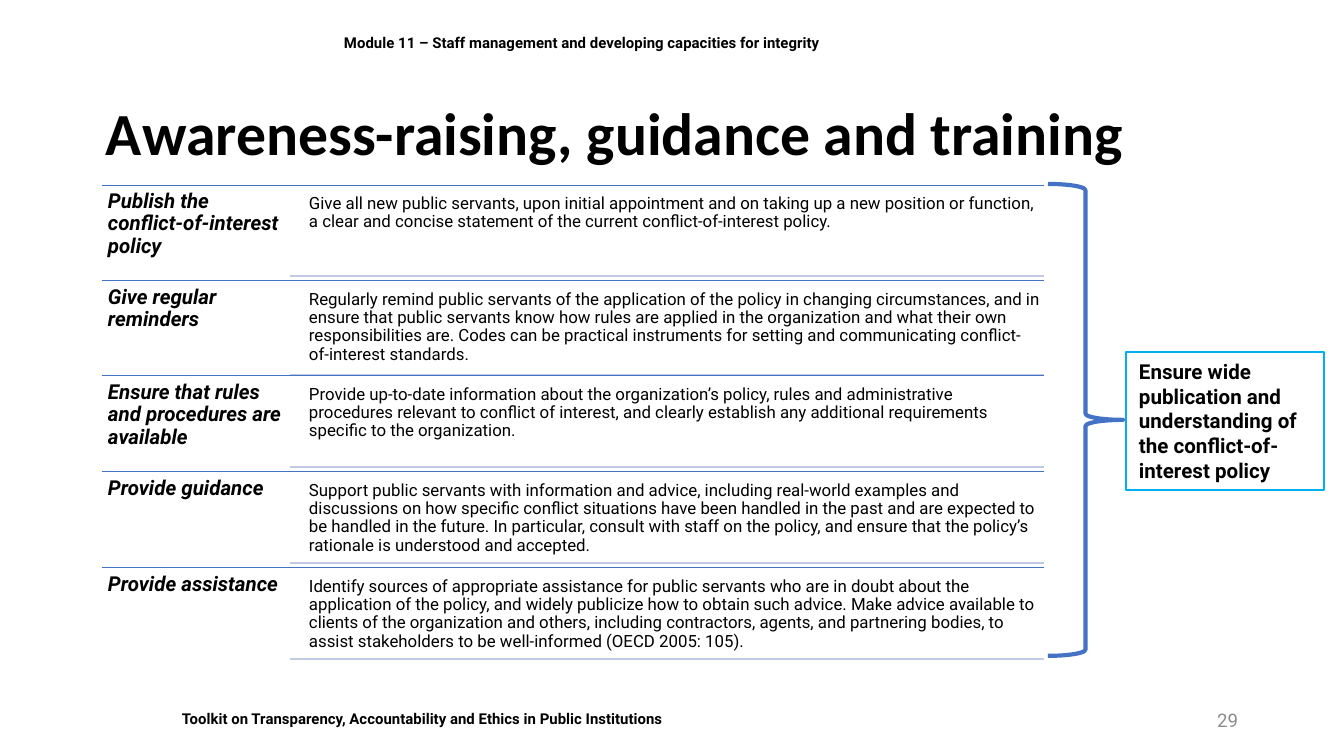
from dataclasses import dataclass

from lxml.etree import SubElement as Sub
from pptx import Presentation
from pptx.dml.color import RGBColor as RGB
from pptx.enum.shapes import MSO_CONNECTOR as Conn, MSO_SHAPE as Kind
from pptx.enum.text import MSO_ANCHOR as Anchor, PP_ALIGN as Align
from pptx.oxml.ns import qn
from pptx.util import Emu, Pt

SCALE = 914400 / 134.4  # EMU in one px


def px(n):
    return Emu(round(n * SCALE))


@dataclass(frozen=True)
class Theme:
    ink: str = "000000"
    paper: str = "FFFFFF"
    grey: str = "8C8C8C"
    blue: str = "4472C4"
    pale: str = "C1C9E4"
    cyan: str = "00B0F0"
    head: str = "Calibri"
    body: str = "Roboto"
    title: int = 32
    label: int = 11
    page: int = 10
    text: int = 9
    small: int = 8


class Deck:
    def __init__(self, theme, wide, high):
        self.theme = theme
        self.prs = Presentation()
        self.prs.slide_width, self.prs.slide_height = px(wide), px(high)
        self.slide = self.prs.slides.add_slide(self.prs.slide_layouts[6])

    def fit(self, shape, words, size, inset=(13, 7), font=None, color=None,
            bold=False, italic=False, align=Align.LEFT, anchor=Anchor.TOP,
            space=1.0):
        frame = shape.text_frame
        side, top = map(px, inset)
        para = frame.paragraphs[0]
        run = para.add_run()
        run.text = words
        formats = (
            (frame, dict(word_wrap=True, vertical_anchor=anchor,
                         margin_left=side, margin_right=side,
                         margin_top=top, margin_bottom=top)),
            (para, dict(alignment=align, line_spacing=space)),
            (run.font, dict(name=font or self.theme.body, size=Pt(size),
                            bold=bold, italic=italic)),
        )
        for item, values in formats:
            for key, value in values.items():
                setattr(item, key, value)
        run.font.color.rgb = RGB.from_string(color or self.theme.ink)

    def text(self, box, words, size, **style):
        shape = self.slide.shapes.add_textbox(*map(px, box))
        self.fit(shape, words, size, **style)

    def shape(self, kind, box, fill=None, line=None, width=1):
        shape = self.slide.shapes.add_shape(kind, *map(px, box))
        shape.shadow.inherit = False
        if fill:
            shape.fill.solid()
            shape.fill.fore_color.rgb = RGB.from_string(fill)
        else:
            shape.fill.background()
        if line:
            shape.line.color.rgb = RGB.from_string(line)
            shape.line.width = Pt(width)
        else:
            shape.line.fill.background()
        return shape

    def rule(self, left, right, y, color, width):
        ends = map(px, (left, y, right, y))
        line = self.slide.shapes.add_connector(Conn.STRAIGHT, *ends)
        line.line.color.rgb = RGB.from_string(color)
        line.line.width = Pt(width)
        Sub(line._element.spPr, qn("a:effectLst"))


# Label, advice, and drop from the row's top to its pale rule
ROWS = (
    ("Publish the conflict-of-interest policy",
     "Give all new public servants, upon initial appointment and on taking up "
     "a new position or function, a clear and concise statement of the "
     "current conflict-of-interest policy.", 91),
    ("Give regular reminders",
     "Regularly remind public servants of the application of the policy in "
     "changing circumstances, and in ensure that public servants know how "
     "rules are applied in the organization and what their own "
     "responsibilities are. Codes can be practical instruments for setting "
     "and communicating conflict-of-interest standards.", 94),
    ("Ensure that rules and procedures are available",
     "Provide up-to-date information about the organization’s policy, rules "
     "and administrative procedures relevant to conflict of interest, and "
     "clearly establish any additional requirements specific to the "
     "organization.", 91),
    ("Provide guidance",
     "Support public servants with information and advice, including "
     "real-world examples and discussions on how specific conflict "
     "situations have been handled in the past and are expected to be handled "
     "in the future. In particular, consult with staff on the policy, and "
     "ensure that the policy’s rationale is understood and accepted.", 91),
    ("Provide assistance",
     "Identify sources of appropriate assistance for public servants who are "
     "in doubt about the application of the policy, and widely publicize how "
     "to obtain such advice. Make advice available to clients of the "
     "organization and others, including contractors, agents, and partnering "
     "bodies, to assist stakeholders to be well-informed (OECD 2005: 105).",
     91),
)
TOP, STEP = 185, 95.75
LEFT, SPLIT, RIGHT = 102, 290, 1044


def main():
    theme = Theme()
    deck = Deck(theme, 1344, 756)

    # Footer, header, page number and title
    foot = deck.shape(Kind.RECTANGLE, (169, 703, 964, 32), theme.paper)
    deck.fit(foot, "Toolkit on Transparency, Accountability and Ethics in "
             "Public Institutions", theme.small, bold=True)
    deck.text((331, 13, 921, 59), "Module 11 – Staff management and "
              "developing capacities for integrity", theme.small,
              bold=True, anchor=Anchor.MIDDLE)
    deck.text((949, 700, 302, 40), "29", theme.page, color=theme.grey,
              align=Align.RIGHT, anchor=Anchor.MIDDLE)
    deck.text((93, 86, 1159, 101), "Awareness-raising, guidance and training",
              theme.title, font=theme.head, bold=True, anchor=Anchor.MIDDLE,
              space=0.9)

    # Ruled rows of advice
    for i, (label, advice, drop) in enumerate(ROWS):
        y = round(TOP + i * STEP)
        deck.rule(LEFT, RIGHT, y, theme.blue, 0.5)
        deck.text((LEFT, y, SPLIT - LEFT, 95), label, theme.label,
                  inset=(6, 6), bold=True, italic=True, space=0.9)
        deck.text((304, y + 5, RIGHT - 304, 87), advice, theme.text,
                  inset=(5, 5), space=0.9)
        deck.rule(SPLIT, RIGHT, y + drop, theme.pale, 1)

    # Brace and conclusion
    deck.shape(Kind.RIGHT_BRACE, (1048, 184, 75, 472), None, theme.blue, 2.25)
    goal = deck.shape(Kind.RECTANGLE, (1126, 352, 198, 138), theme.paper,
                      theme.cyan, 0.75)
    deck.fit(goal, "Ensure wide publication and understanding of the "
             "conflict-of-interest policy", theme.label, bold=True)

    deck.prs.save("out.pptx")


if __name__ == "__main__":
    main()
